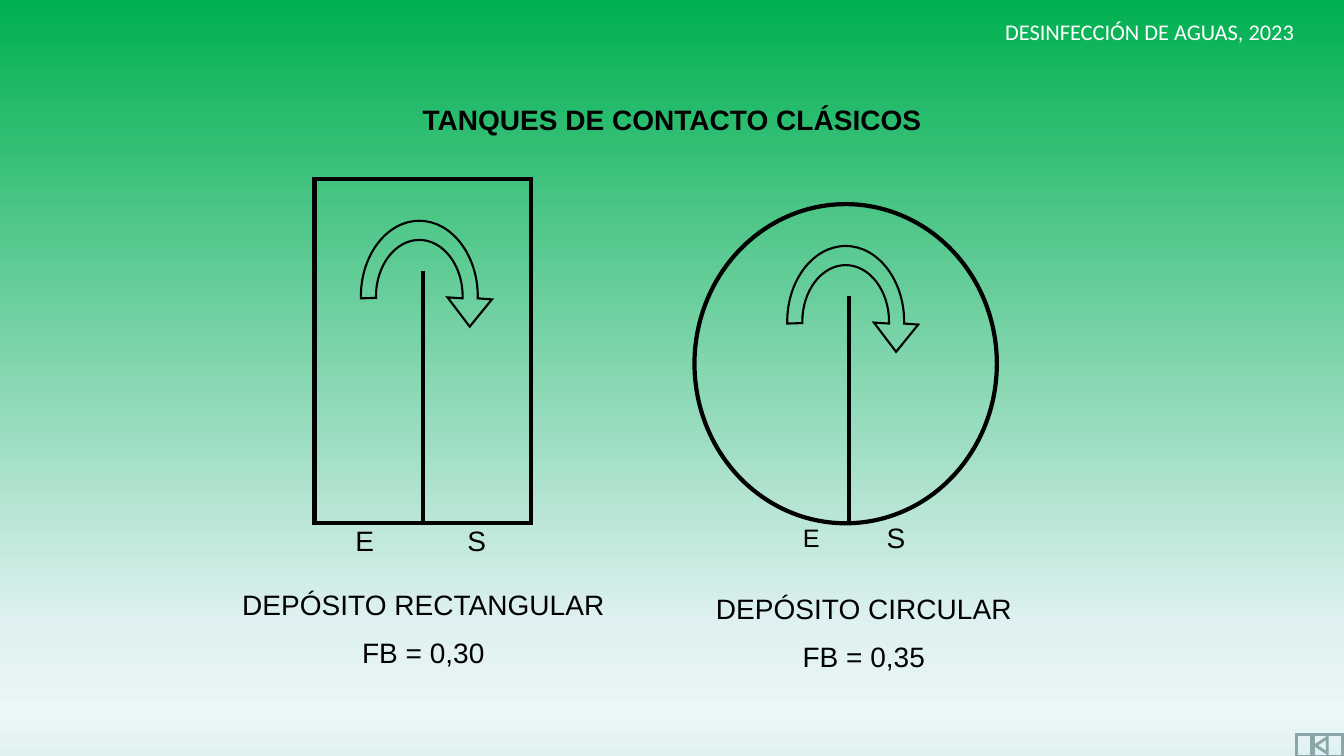
import lxml.etree
import pptx
import pptx.dml.color
import pptx.enum.shapes
import pptx.enum.text
import pptx.oxml.ns
import pptx.util

SHAPES = pptx.enum.shapes.MSO_SHAPE
COLUMNS, ROWS = 160, 90
ROUNDNESS = 0.55


def color(value):
    """Turn a hex string into a colour."""
    return pptx.dml.color.RGBColor.from_string(value)


def add_element(parent, tag, **attributes):
    """Append a drawing element to its parent."""
    return lxml.etree.SubElement(parent, pptx.oxml.ns.qn(tag), **attributes)


def arch(rx, ry, start, end):
    """List the curve points of a half ellipse with short upright feet."""
    k = ROUNDNESS
    right = [(rx, start * 0.6), (rx, start * 0.3), (rx, 0)]
    rise = [(rx, -ry * k), (rx * k, -ry), (0, -ry)]
    fall = [(-rx * k, -ry), (-rx, -ry * k), (-rx, 0)]
    left = [(-rx, end * 0.3), (-rx, end * 0.6), (-rx, end)]
    return right + rise + fall + left


class TankSlide:
    """Draw on one slide with a grid of 160 columns by 90 rows."""

    font, ink, text_size, wall = "Arial", "000000", 20, 3

    def __init__(self, presentation):
        """Add a title-only slide and work out its grid cell."""
        self.slide = presentation.slides.add_slide(presentation.slide_layouts[5])
        self.column = presentation.slide_width / COLUMNS
        self.row = presentation.slide_height / ROWS

    def point(self, x, y):
        """Turn a grid position into slide lengths."""
        return round(x * self.column), round(y * self.row)

    def box(self, x, y, width, height):
        """Turn a grid rectangle into slide lengths."""
        return *self.point(x, y), *self.point(width, height)

    def background(self, stops):
        """Fill the background from top to bottom through the stops."""
        fill = self.slide.background.fill
        fill.gradient()
        fill.gradient_angle = 270
        stop_list = next(self.slide.element.iter(pptx.oxml.ns.qn("a:gsLst")))
        stop_list.clear()
        for percent, value in stops:
            stop = add_element(stop_list, "a:gs", pos=str(percent * 1000))
            add_element(stop, "a:srgbClr", val=value)

    def format_text(self, shape, text, size=None, font=None, value=None, bold=False):
        """Write centred text and format its runs."""
        frame = shape.text_frame
        frame.text = text
        frame.word_wrap = True
        frame.vertical_anchor = pptx.enum.text.MSO_ANCHOR.TOP
        size = size or self.text_size
        for index, paragraph in enumerate(frame.paragraphs):
            paragraph.alignment = pptx.enum.text.PP_ALIGN.CENTER
            paragraph.space_before = pptx.util.Pt(size / 2 if index else 0)
            for run in paragraph.runs:
                run.font.name = font or self.font
                run.font.size = pptx.util.Pt(size)
                run.font.bold = bold
                run.font.color.rgb = color(value or self.ink)

    def title(self, area, text):
        """Place and format the title placeholder."""
        title = self.slide.shapes.title
        title.left, title.top, title.width, title.height = self.box(*area)
        self.format_text(title, text, bold=True)

    def text(self, area, text, **style):
        """Add a text box."""
        self.format_text(self.slide.shapes.add_textbox(*self.box(*area)), text, **style)

    def outline(self, shape, width, value=None):
        """Leave a shape unfilled with a sharp-cornered outline."""
        shape.shadow.inherit = False
        shape.fill.background()
        shape.line.color.rgb = color(value or self.ink)
        shape.line.width = pptx.util.Pt(width)
        line = shape.element.spPr.find(pptx.oxml.ns.qn("a:ln"))
        add_element(line, "a:miter", lim="800000")
        return shape

    def shape(self, kind, area, width=None, value=None):
        """Add an outlined preset shape."""
        shape = self.slide.shapes.add_shape(kind, *self.box(*area))
        return self.outline(shape, width or self.wall, value)

    def baffle(self, x, bottom, top, tank=None):
        """Add the upright wall, joined to the tank's bottom if given."""
        connector = self.slide.shapes.add_connector(
            pptx.enum.shapes.MSO_CONNECTOR.STRAIGHT,
            *self.point(x, bottom), *self.point(x, top))
        if tank is not None:
            connector.begin_connect(tank, 2)
        connector.line.color.rgb = color(self.ink)
        connector.line.width = pptx.util.Pt(self.wall)
        add_element(connector.element.spPr, "a:effectLst")

    def flow_arrow(self, x, y):
        """Add the arched arrow whose arc is centred at x, y."""
        inner = arch(5.16, 6.72, 0.24, 0.18)
        outer = [(-dx, dy) for dx, dy in arch(6.96, 9, 0.24, 0.24)]
        head = [(8.64, 0.36), (6, 3.6), (3.36, 0.12), (5.16, 0.24)]
        offsets = inner + [(-6.96, 0.24)] + outer + head
        points = [self.point(x + dx, y + dy) for dx, dy in offsets]
        builder = self.slide.shapes.build_freeform(*points[-1])
        builder.add_line_segments(points, close=True)
        shape = self.outline(builder.convert_to_shape(), 1.5)
        qn = pptx.oxml.ns.qn
        lines = list(shape.element.iter(qn("a:lnTo")))
        size = len(inner)
        for curved in (lines[:size], lines[size + 1:2 * size + 1]):
            for first in range(0, size, 3):
                curve = lxml.etree.Element(qn("a:cubicBezTo"))
                curved[first].addprevious(curve)
                for line in curved[first:first + 3]:
                    curve.append(line[0])
                    line.getparent().remove(line)


def main():
    """Build and save the slide."""
    presentation = pptx.Presentation()
    presentation.slide_width = pptx.util.Inches(13.33)
    presentation.slide_height = pptx.util.Inches(7.5)
    page = TankSlide(presentation)
    page.background([(0, "00B050"), (83, "E0F1F2"), (95, "EBF6F7"), (100, "E0F1F2")])
    page.shape(SHAPES.ACTION_BUTTON_BEGINNING, (154.32, 87.48, 5.52, 2.52), 2, "8AA6A8")
    page.text((117.84, 1.56, 38.04, 4.44), "DESINFECCIÓN DE AGUAS, 2023",
              size=16, font="Calibri", value="FFFFFF")
    page.title((20, 11.64, 120, 5.88), "TANQUES DE CONTACTO CLÁSICOS")

    rectangle = page.shape(SHAPES.RECTANGLE, (37.44, 21.3, 25.8, 41))
    page.baffle(50.34, 62.3, 32.28, rectangle)
    page.shape(SHAPES.OVAL, (82.68, 24.3, 36, 38))
    page.baffle(101.1, 62.3, 35.28)
    for center in ((49.92, 35.28), (100.68, 38.28)):
        page.flow_arrow(*center)

    for x, y, text, size in ((39.72, 61.68, "E", 20), (53.04, 61.68, "S", 20),
                             (92.88, 61.56, "E", 18), (102.96, 61.38, "S", 20)):
        page.text((x, y, 7.44, 5.16), text, size=size)
    for x, y, text in ((27.6, 69.36, "DEPÓSITO RECTANGULAR\nFB = 0,30"),
                       (80.04, 69.84, "DEPÓSITO CIRCULAR\nFB = 0,35")):
        page.text((x, y, 45.6, 11.28), text)
    presentation.save("out.pptx")


if __name__ == "__main__":
    main()
